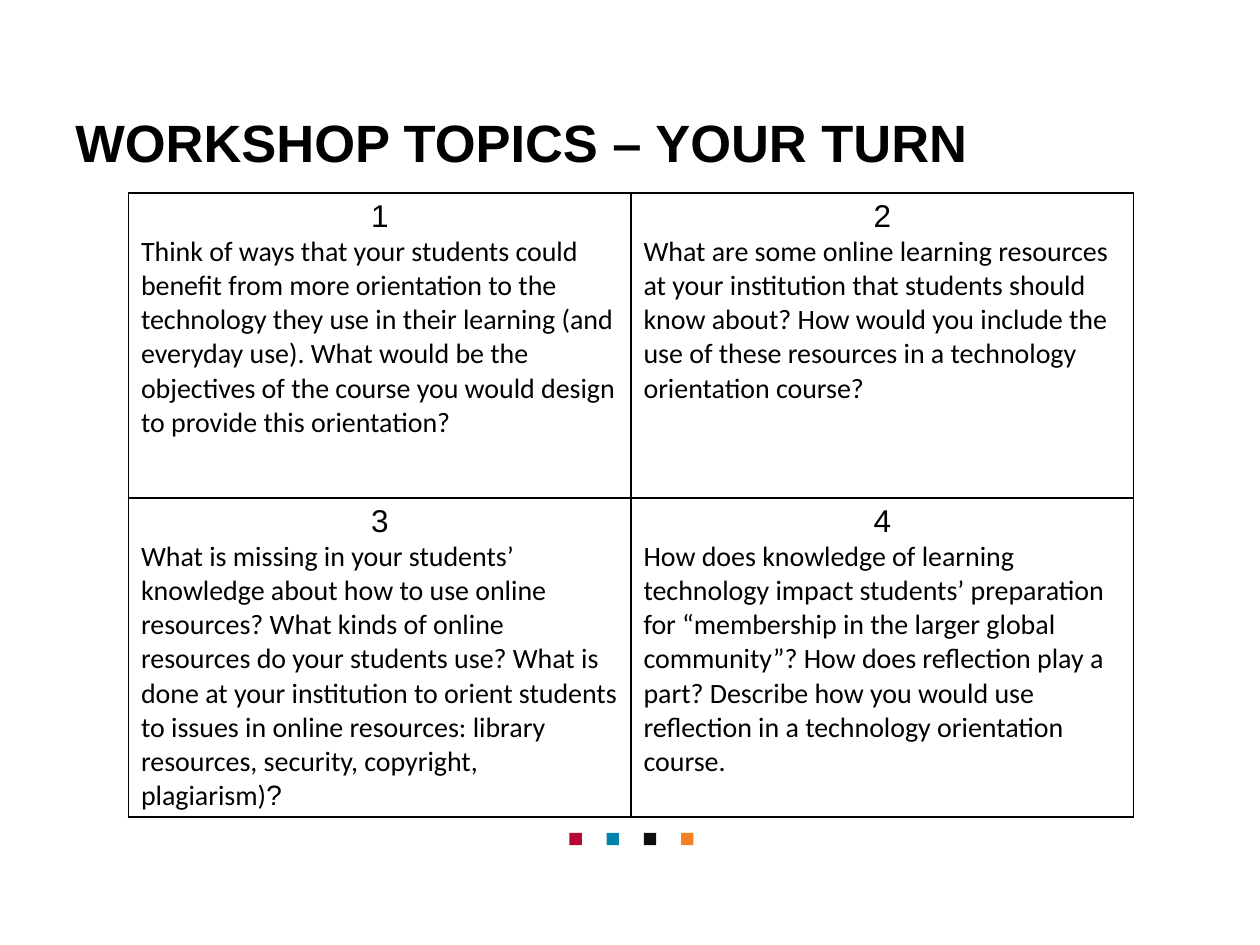
from dataclasses import dataclass

import lxml.etree
import pptx
import pptx.dml.color
import pptx.enum.shapes
import pptx.enum.text
import pptx.oxml.ns
import pptx.util
from pptx.util import Cm, Pt

COLOURS = {
    "ink": "000000",
    "red": "B30838",
    "teal": "0084A9",
    "black": "0D0D0D",
    "orange": "F58025",
}
SQUARE_ORDER = ("red", "teal", "black", "orange")
SQUARE_SIZE, SQUARE_STEP = 0.25, 0.75
SQUARE_LEFT, SQUARE_TOP = 11.48, 16.79
COLUMN_WIDTH, ROW_HEIGHT = 10.13, 6.15
COLUMN_COUNT = 2


@dataclass
class Topic:
    number: str
    question: str
    arial_ending: str = ""


TOPICS = [
    Topic("1", "Think of ways that your students could benefit from more orientation "
               "to the technology they use in their learning (and everyday use). What "
               "would be the objectives of the course you would design to provide this "
               "orientation?"),
    Topic("2", "What are some online learning resources at your institution that "
               "students should know about? How would you include the use of these "
               "resources in a technology orientation course?"),
    Topic("3", "What is missing in your students’ knowledge about how to use online "
               "resources? What kinds of online resources do your students use? What is "
               "done at your institution to orient students to issues in online "
               "resources: library resources, security, copyright, plagiarism)", "?"),
    Topic("4", "How does knowledge of learning technology impact students’ preparation "
               "for “membership in the larger global community”? How does reflection "
               "play a part? Describe how you would use reflection in a technology "
               "orientation course."),
]


def colour(name: str) -> pptx.dml.color.RGBColor:
    return pptx.dml.color.RGBColor.from_string(COLOURS[name])


def format_span(span, font_name: str, size: int, bold: bool = False) -> None:
    span.font.name = font_name
    span.font.size = Pt(size)
    span.font.bold = bold
    span.font.color.rgb = colour("ink")


def add_square(page, index: int, colour_name: str) -> None:
    square = page.shapes.add_shape(
        pptx.enum.shapes.MSO_SHAPE.RECTANGLE,
        Cm(SQUARE_LEFT + index * SQUARE_STEP), Cm(SQUARE_TOP),
        Cm(SQUARE_SIZE), Cm(SQUARE_SIZE))
    square.shadow.inherit = False
    square.fill.solid()
    square.fill.fore_color.rgb = colour(colour_name)
    square.line.fill.background()


def add_title(page, wording: str) -> None:
    box = page.shapes.add_textbox(Cm(1.27), Cm(1.27), Cm(23.29), Cm(3.18))
    frame = box.text_frame
    frame.word_wrap = True
    frame.vertical_anchor = pptx.enum.text.MSO_ANCHOR.MIDDLE
    frame.text = wording
    format_span(frame.paragraphs[0].runs[0], "Arial", 30, bold=True)


def add_borders(cell) -> None:
    """Rule all four sides; the lines must precede the fill in the XML."""
    properties = cell._tc.get_or_add_tcPr()
    for position, side in enumerate(("lnL", "lnR", "lnT", "lnB")):
        line = lxml.etree.Element(pptx.oxml.ns.qn(f"a:{side}"), w=str(Pt(1)))
        fill = lxml.etree.SubElement(line, pptx.oxml.ns.qn("a:solidFill"))
        lxml.etree.SubElement(fill, pptx.oxml.ns.qn("a:srgbClr"), val=COLOURS["ink"])
        properties.insert(position, line)


def fill_cell(cell, topic: Topic) -> None:
    cell.fill.background()
    add_borders(cell)
    frame = cell.text_frame
    frame.text = topic.number
    heading = frame.paragraphs[0]
    heading.alignment = pptx.enum.text.PP_ALIGN.CENTER
    format_span(heading.runs[0], "Arial", 18)
    para = frame.add_paragraph()
    para.text = topic.question
    format_span(para.runs[0], "Calibri", 16)
    if topic.arial_ending:
        span = para.add_run()
        span.text = topic.arial_ending
        format_span(span, "Arial", 16)


def add_topic_table(page, topics: list[Topic]) -> None:
    row_count = len(topics) // COLUMN_COUNT
    table = page.shapes.add_table(
        row_count, COLUMN_COUNT, Cm(2.59), Cm(3.89),
        Cm(COLUMN_WIDTH * COLUMN_COUNT), Cm(ROW_HEIGHT * row_count)).table
    table.first_row = False
    table.horz_banding = False
    for index, topic in enumerate(topics):
        fill_cell(table.cell(*divmod(index, COLUMN_COUNT)), topic)


def main() -> None:
    deck = pptx.Presentation()
    deck.slide_width, deck.slide_height = Cm(25.4), Cm(19.05)
    page = deck.slides.add_slide(deck.slide_layouts[6])
    for index, colour_name in enumerate(SQUARE_ORDER):
        add_square(page, index, colour_name)
    add_title(page, "WORKSHOP TOPICS – YOUR TURN")
    add_topic_table(page, TOPICS)
    deck.save("out.pptx")


if __name__ == "__main__":
    main()
